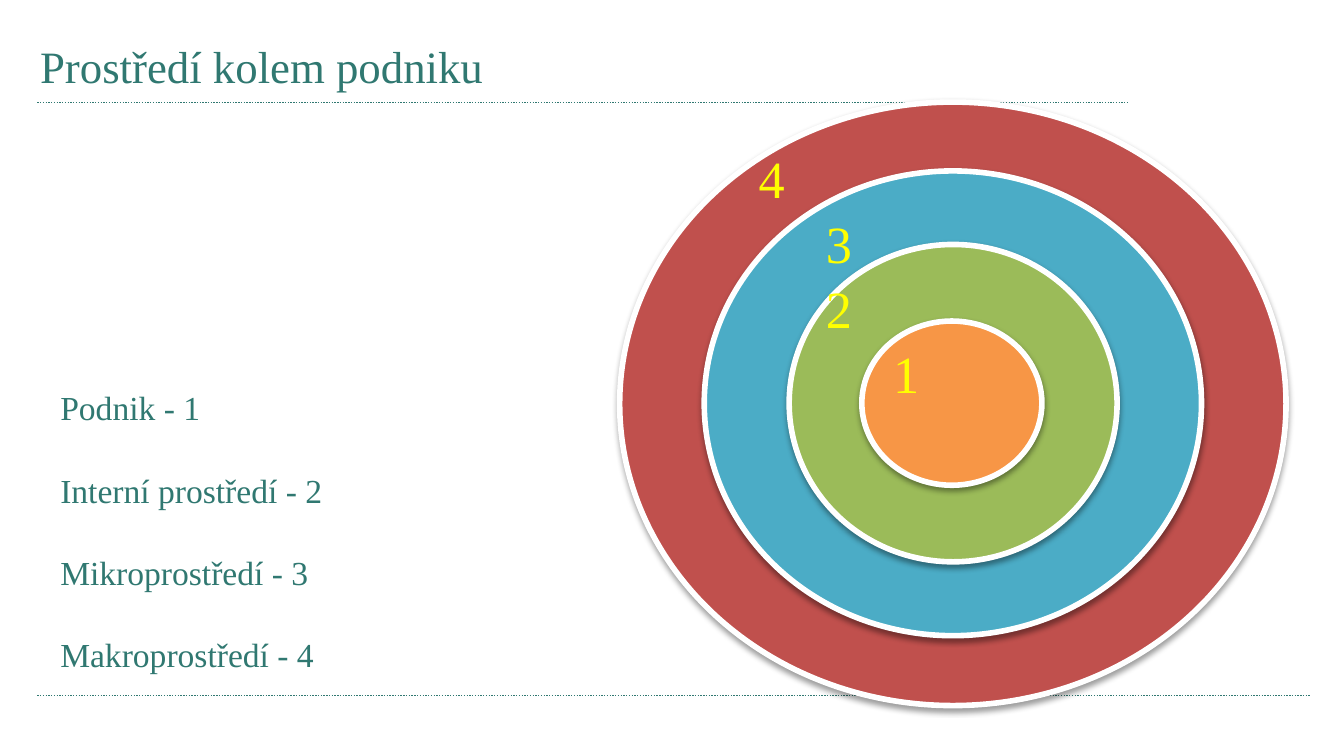
from lxml.etree import SubElement
from pptx import Presentation
from pptx.dml.color import RGBColor
from pptx.enum.dml import MSO_LINE
from pptx.enum.shapes import MSO_CONNECTOR, MSO_SHAPE
from pptx.enum.text import MSO_ANCHOR
from pptx.oxml import parse_xml
from pptx.oxml.ns import nsdecls, qn
from pptx.util import Pt

TEAL = RGBColor(0x30, 0x78, 0x71)
YELLOW = RGBColor(0xFF, 0xFF, 0x00)
WHITE = RGBColor(0xFF, 0xFF, 0xFF)
RED = RGBColor(0xC0, 0x50, 0x4D)
BLUE = RGBColor(0x4B, 0xAC, 0xC6)
GREEN = RGBColor(0x9B, 0xBB, 0x59)
ORANGE = RGBColor(0xF7, 0x96, 0x46)

SHADOW = (
    f'<a:effectLst {nsdecls("a")}>'
    f'<a:outerShdw blurRad="{Pt(3.1)}" dist="{Pt(1.6)}" dir="5400000" rotWithShape="0">'
    '<a:srgbClr val="000000"><a:alpha val="38000"/></a:srgbClr>'
    '</a:outerShdw></a:effectLst>'
)


class SlideBuilder:
    font = "Times New Roman"

    def __init__(self, slide):
        self.s = slide

    def rule(self, x1, x2, y):
        sp = self.s.shapes.add_connector(
            MSO_CONNECTOR.STRAIGHT, Pt(x1), Pt(y), Pt(x2), Pt(y))
        sp.line.color.rgb = TEAL
        sp.line.width = Pt(0.75)
        sp.line.dash_style = MSO_LINE.ROUND_DOT
        SubElement(sp._element.spPr, qn("a:effectLst"))

    def ring(self, x, y, w, h, color):
        sp = self.s.shapes.add_shape(
            MSO_SHAPE.FLOWCHART_CONNECTOR, Pt(x), Pt(y), Pt(w), Pt(h))
        sp.fill.solid()
        sp.fill.fore_color.rgb = color
        sp.line.color.rgb = WHITE
        sp.line.width = Pt(3)
        sp._element.spPr.append(parse_xml(SHADOW))

    def text(self, x, y, w, h, lines, size, color=TEAL, gap=0, indents=None,
             anchor=MSO_ANCHOR.TOP):
        tf = self.s.shapes.add_textbox(Pt(x), Pt(y), Pt(w), Pt(h)).text_frame
        tf.word_wrap = True
        tf.vertical_anchor = anchor
        for i, line in enumerate(lines):
            p = tf.add_paragraph() if i else tf.paragraphs[0]
            if i:
                p.space_before = Pt(gap)
            if indents:
                p._p.get_or_add_pPr().set("marL", str(Pt(indents[i])))
            r = p.add_run()
            r.text = line
            r.font.name = self.font
            r.font.size = Pt(size)
            r.font.color.rgb = color


def main():
    prs = Presentation()
    prs.slide_width, prs.slide_height = Pt(720), Pt(405)
    s = SlideBuilder(prs.slides.add_slide(prs.slide_layouts[6]))

    # Dotted rules under the title and above the footer
    s.rule(20, 604, 55)
    s.rule(20, 702, 372.5)

    # Nested environments, outermost first
    s.ring(332, 54.7, 357, 323.3, RED)
    s.ring(377.3, 91.6, 266.4, 249, BLUE)
    s.ring(422.8, 131, 175.7, 170, GREEN)
    s.ring(461.7, 172, 96.5, 88, ORANGE)

    # Title
    s.text(14.4, 15.1, 306, 40.3, ["Prostředí kolem podniku"], 24,
           anchor=MSO_ANCHOR.MIDDLE)

    # Ring numbers, stepping inwards
    s.text(15.8, 75, 652.3, 113, ["4", "3", "2", "1"], 28, YELLOW, gap=1.2,
           indents=[383.6 + 36 * step for step in (0, 1, 1, 2)])

    # Legend
    s.text(25.2, 204, 281.5, 160,
           ["Podnik - 1", "Interní prostředí - 2",
            "Mikroprostředí - 3", "Makroprostředí - 4"], 18, gap=22.5)

    prs.save("out.pptx")


if __name__ == "__main__":
    main()
